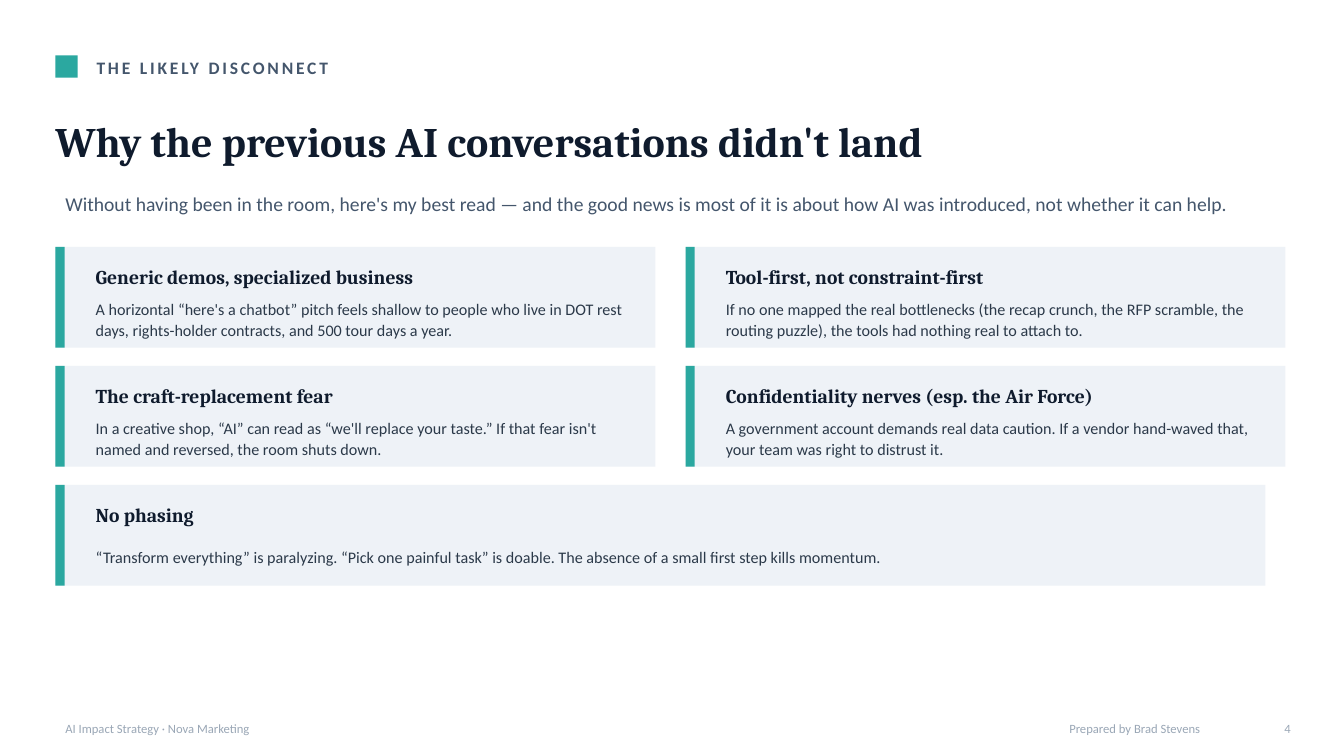
from pptx import Presentation
from pptx.dml.color import RGBColor
from pptx.enum.shapes import MSO_SHAPE
from pptx.enum.text import MSO_ANCHOR, PP_ALIGN
from pptx.util import Inches, Pt

RECT = MSO_SHAPE.RECTANGLE
MIDDLE = MSO_ANCHOR.MIDDLE
LEFT, RIGHT = PP_ALIGN.LEFT, PP_ALIGN.RIGHT

# Content
LABEL = "THE LIKELY DISCONNECT"
TITLE = "Why the previous AI conversations didn't land"
INTRO = ("Without having been in the room, here's my best read — and the good news "
         "is most of it is about how AI was introduced, not whether it can help.")
CARDS = [
    ("Generic demos, specialized business",
     "A horizontal “here's a chatbot” pitch feels shallow to people who live in "
     "DOT rest days, rights-holder contracts, and 500 tour days a year."),
    ("Tool-first, not constraint-first",
     "If no one mapped the real bottlenecks (the recap crunch, the RFP scramble, "
     "the routing puzzle), the tools had nothing real to attach to."),
    ("The craft-replacement fear",
     "In a creative shop, “AI” can read as “we'll replace your taste.” If that "
     "fear isn't named and reversed, the room shuts down."),
    ("Confidentiality nerves (esp. the Air Force)",
     "A government account demands real data caution. If a vendor hand-waved "
     "that, your team was right to distrust it."),
    ("No phasing",
     "“Transform everything” is paralyzing. “Pick one painful task” is doable. "
     "The absence of a small first step kills momentum."),
]
FOOTER = [  # text, left, width, alignment
    ("AI Impact Strategy · Nova Marketing", 0.55, 7, LEFT),
    ("Prepared by Brad Stevens", 9, 3, RIGHT),
    ("4", 12.5, 0.4, RIGHT),
]


# Theme: style = (font, size, colour, bold)
class Theme:
    accent = "2BA8A0"
    panel = "EEF2F7"
    label = ("Calibri", 12.5, "44566C", True)
    title = ("Cambria", 30, "0F1B2D", True)
    intro = ("Calibri", 14, "44566C", False)
    head = ("Cambria", 14, "0F1B2D", True)
    body = ("Calibri", 11.5, "2B3949", False)
    foot = ("Calibri", 9, "9AA7B6", False)


# Layout
EDGE, TOP = 0.55, 2.45
CARD_W, CARD_H, WIDE_W = 5.95, 1, 12
GAP_X, GAP_Y = 0.3, 0.18
BAR, INDENT = 0.09, 0.3


def add_rect(slide, x, y, w, h, color):
    shape = slide.shapes.add_shape(RECT, Inches(x), Inches(y), Inches(w), Inches(h))
    shape.shadow.inherit = False
    shape.fill.solid()
    shape.fill.fore_color.rgb = RGBColor.from_string(color)
    shape.line.fill.background()


def add_text(slide, text, x, y, w, h, style, align=LEFT, leading=None):
    box = slide.shapes.add_textbox(Inches(x), Inches(y), Inches(w), Inches(h))
    frame = box.text_frame
    frame.word_wrap = True
    frame.vertical_anchor = MIDDLE
    frame.text = text
    para = frame.paragraphs[0]
    para.alignment = align
    if leading:
        para.line_spacing = Pt(leading)
    font = para.runs[0].font
    name, size, color, bold = style
    font.name, font.size, font.bold = name, Pt(size), bold
    font.color.rgb = RGBColor.from_string(color)
    return frame


def add_card(slide, x, y, w, head, body):
    add_rect(slide, x, y, w, CARD_H, Theme.panel)
    add_rect(slide, x, y, BAR, CARD_H, Theme.accent)
    left, width = x + INDENT, w - 0.5
    add_text(slide, head, left, y + 0.12, width, 0.35, Theme.head)
    add_text(slide, body, left, y + 0.46, width, 0.5, Theme.body, leading=15)


def main():
    deck = Presentation()
    deck.slide_width, deck.slide_height = Inches(13.33), Inches(7.5)
    slide = deck.slides.add_slide(deck.slide_layouts[6])

    # Header
    add_rect(slide, EDGE, 0.55, 0.22, 0.22, Theme.accent)
    label = add_text(slide, LABEL, 0.86, 0.5, 11, 0.33, Theme.label)
    label.paragraphs[0].runs[0].font._element.set("spc", "200")
    title = add_text(slide, TITLE, EDGE, 0.95, 12.2, 0.9, Theme.title)
    title.margin_left = title.margin_right = 0
    title.margin_top = title.margin_bottom = 0
    add_text(slide, INTRO, EDGE, 1.72, 12.2, 0.55, Theme.intro, leading=20)

    # Cards: two columns, the last one alone and wide
    for i, (head, body) in enumerate(CARDS):
        row, col = divmod(i, 2)
        x = EDGE + col * (CARD_W + GAP_X)
        y = TOP + row * (CARD_H + GAP_Y)
        width = WIDE_W if i == len(CARDS) - 1 else CARD_W
        add_card(slide, x, y, width, head, body)

    # Footer
    for text, x, w, align in FOOTER:
        add_text(slide, text, x, 7.08, w, 0.3, Theme.foot, align)

    deck.save("out.pptx")


if __name__ == "__main__":
    main()
